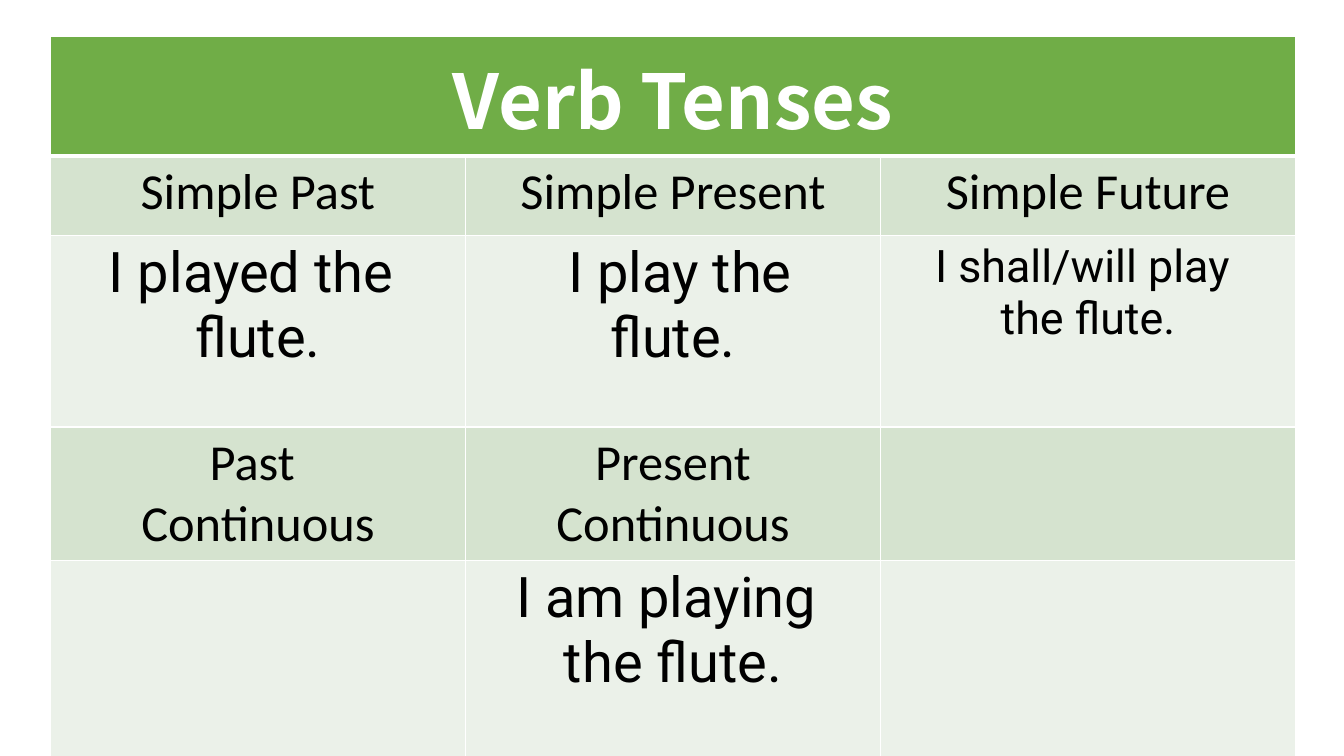
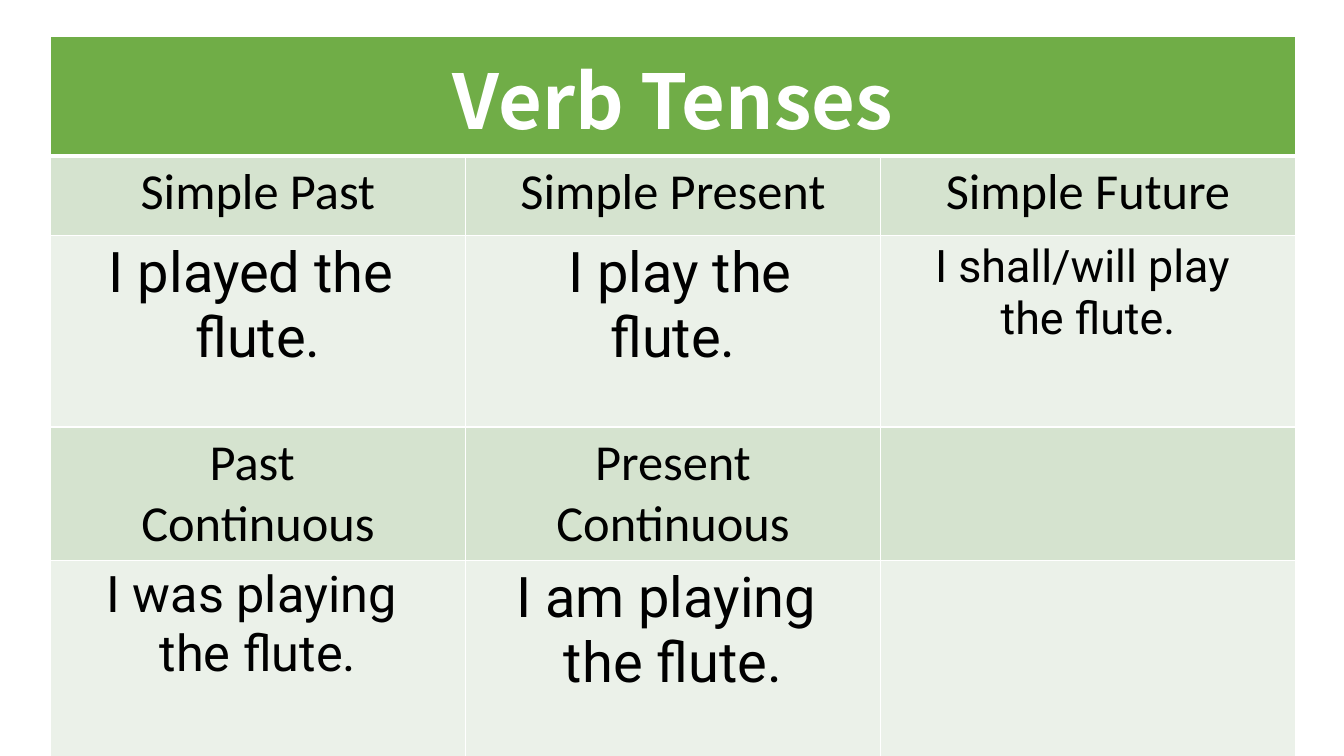
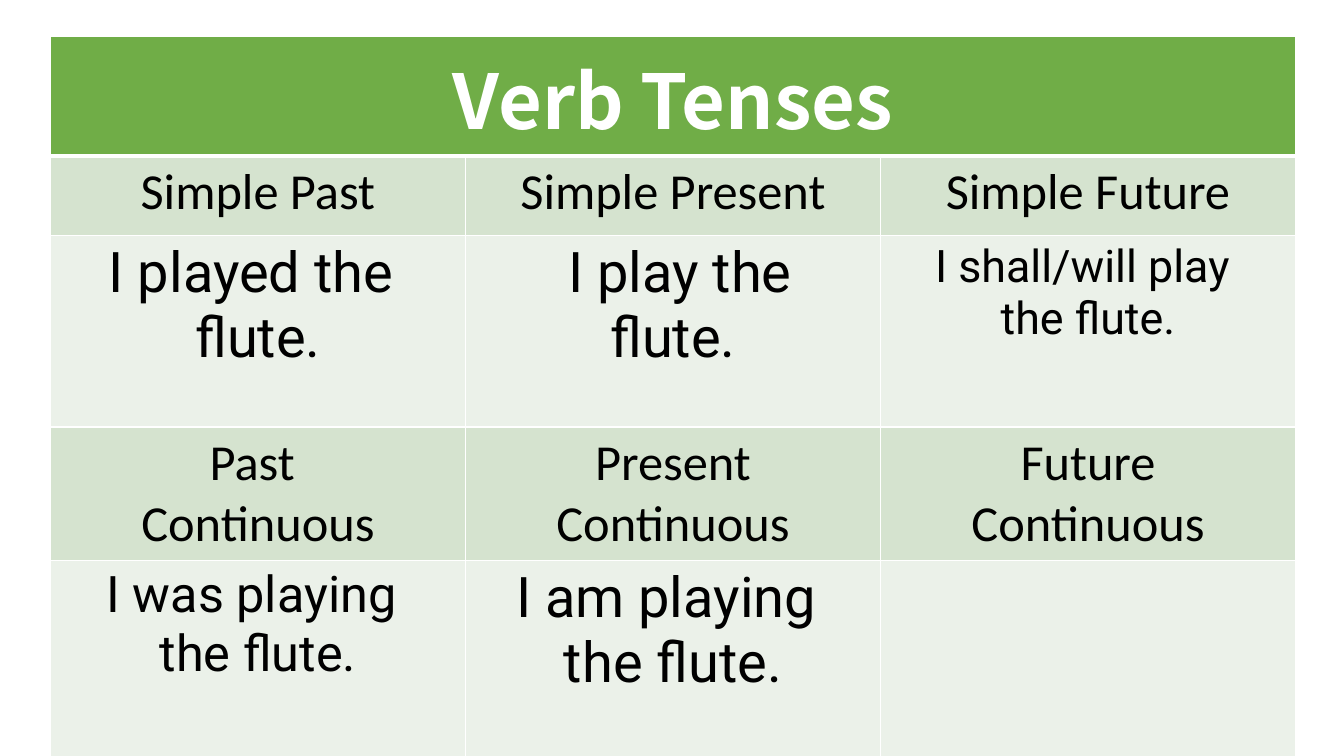
from dataclasses import dataclass

from lxml import etree
from pptx import Presentation
from pptx import util as u
from pptx.dml.color import RGBColor
from pptx.enum import text
from pptx.oxml import ns


@dataclass(frozen=True)
class Theme:
    title_fill: str = "70AD47"
    tense_fill: str = "D5E3CF"
    example_fill: str = "EBF1E9"
    border: str = "FFFFFF"
    title_text: str = "FFFFFF"
    body_text: str = "000000"
    title_font: str = "Noto Sans CJK JP"
    tense_font: str = "Calibri"
    example_font: str = "Roboto"
    title_size: int = 54
    large: int = 40
    medium: int = 36
    small: int = 32
    thin: float = 1
    thick: float = 3


THEME = Theme()


@dataclass(frozen=True)
class Entry:
    """Text of one cell, one line per paragraph, shown from a given slide on."""
    lines: tuple[str, ...]
    size: int
    first_slide: int = 1


@dataclass(frozen=True)
class Band:
    """A table row of one style."""
    height: float
    fill: str
    font: str
    color: str
    entries: tuple[Entry, ...]
    bold: bool = False


# Grid, in inches
SLIDE_WIDTH, SLIDE_HEIGHT = 13.33, 7.5
LEFT, TOP, TABLE_WIDTH = 0.5, 0.36, 12.35
COLUMNS = 3
SLIDE_COUNT = 3


def tense_band(height: float, *entries: Entry) -> Band:
    return Band(height, THEME.tense_fill, THEME.tense_font, THEME.body_text, entries)


def example_band(height: float, *entries: Entry) -> Band:
    return Band(height, THEME.example_fill, THEME.example_font, THEME.body_text, entries)


# Trailing spaces are part of the centred lines
BANDS = (
    Band(1.13, THEME.title_fill, THEME.title_font, THEME.title_text,
         (Entry(("Verb Tenses",), THEME.title_size),), bold=True),
    tense_band(
        0.79,
        Entry(("Simple Past",), THEME.medium),
        Entry(("Simple Present",), THEME.medium),
        Entry(("Simple Future",), THEME.medium)),
    example_band(
        1.9,
        Entry(("I played the ", "flute."), THEME.large),
        Entry((" I play the", "flute."), THEME.large),
        Entry(("I shall/will play ", "the flute."), THEME.small)),
    tense_band(
        0.87,
        Entry(("Past ", "Continuous"), THEME.medium),
        Entry(("Present Continuous",), THEME.medium),
        Entry(("Future", "Continuous"), THEME.medium, first_slide=3)),
    example_band(
        2.09,
        Entry(("I was playing ", "the flute."), THEME.medium, first_slide=2),
        Entry(("I am playing ", "the flute."), THEME.large)),
)


def set_borders(cell, top: float, bottom: float) -> None:
    """Draw all four cell borders; lines must precede the fill in the XML."""
    properties = cell._tc.get_or_add_tcPr()
    widths = {"lnL": THEME.thin, "lnR": THEME.thin, "lnT": top, "lnB": bottom}
    for position, (tag, width) in enumerate(widths.items()):
        line = etree.Element(ns.qn(f"a:{tag}"), w=str(u.Pt(width)))
        fill = etree.SubElement(line, ns.qn("a:solidFill"))
        etree.SubElement(fill, ns.qn("a:srgbClr"), val=THEME.border)
        properties.insert(position, line)


def write_entry(cell, entry: Entry, band: Band) -> None:
    cell.text = "\n".join(entry.lines)
    for paragraph in cell.text_frame.paragraphs:
        paragraph.alignment = text.PP_ALIGN.CENTER
        font = paragraph.font
        font.name = band.font
        font.size = u.Pt(entry.size)
        font.bold = band.bold
        font.color.rgb = RGBColor.from_string(band.color)


def add_tense_table(slide, slide_number: int) -> None:
    height = sum(band.height for band in BANDS)
    table = slide.shapes.add_table(
        len(BANDS), COLUMNS, u.Inches(LEFT), u.Inches(TOP),
        u.Inches(TABLE_WIDTH), u.Inches(height)).table
    table.first_row = table.horz_banding = False

    for row, band in enumerate(BANDS):
        table.rows[row].height = u.Inches(band.height)
        # The line under the title is thicker than the rest
        top = THEME.thick if row == 1 else THEME.thin
        bottom = THEME.thick if row == 0 else THEME.thin
        for column in range(COLUMNS):
            cell = table.cell(row, column)
            cell.fill.solid()
            cell.fill.fore_color.rgb = RGBColor.from_string(band.fill)
            set_borders(cell, top, bottom)
        for column, entry in enumerate(band.entries):
            if entry.first_slide <= slide_number:
                write_entry(table.cell(row, column), entry, band)

    # The title spans every column
    table.cell(0, 0).merge(table.cell(0, COLUMNS - 1))


def main() -> None:
    presentation = Presentation()
    presentation.slide_width = u.Inches(SLIDE_WIDTH)
    presentation.slide_height = u.Inches(SLIDE_HEIGHT)
    blank = presentation.slide_layouts[6]
    for slide_number in range(1, SLIDE_COUNT + 1):
        add_tense_table(presentation.slides.add_slide(blank), slide_number)
    presentation.save("out.pptx")


if __name__ == "__main__":
    main()
